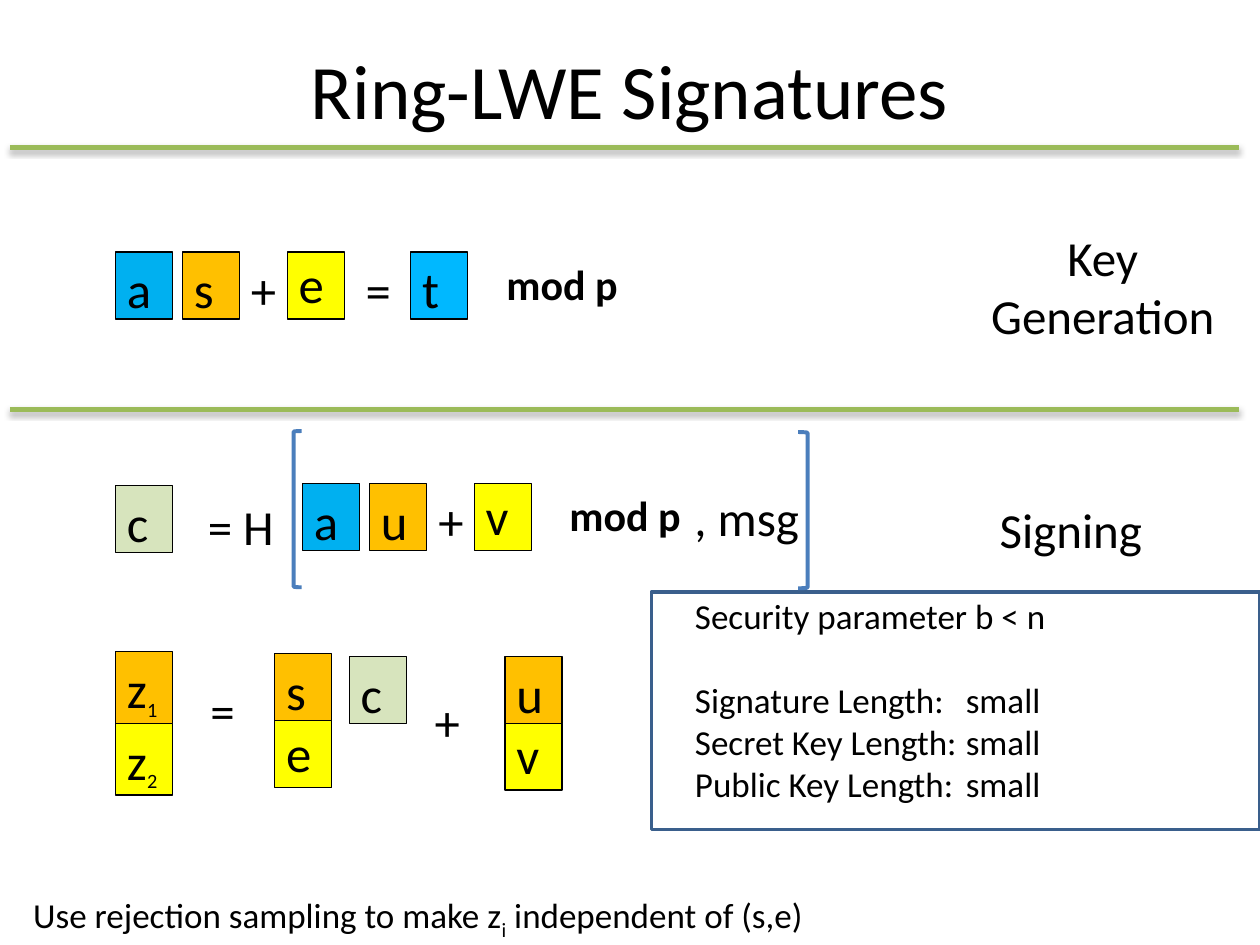
import pptx
import pptx.dml.color
import pptx.enum.shapes
import pptx.enum.text
import pptx.oxml
import pptx.oxml.ns
import pptx.util

Cm = pptx.util.Cm
Pt = pptx.util.Pt
RGBColor = pptx.dml.color.RGBColor
Shape = pptx.enum.shapes.MSO_SHAPE
Align = pptx.enum.text.PP_ALIGN
Anchor = pptx.enum.text.MSO_ANCHOR

BLACK = RGBColor(0x00, 0x00, 0x00)
BLUE = RGBColor(0x00, 0xB0, 0xF0)
BRIGHT_BLUE = RGBColor(0x00, 0xB8, 0xFF)
ORANGE = RGBColor(0xFF, 0xC0, 0x00)
YELLOW = RGBColor(0xFF, 0xFF, 0x00)
PALE_GREEN = RGBColor(0xD7, 0xE4, 0xBD)
GREEN = RGBColor(0x9B, 0xBB, 0x59)
BRACKET_BLUE = RGBColor(0x4B, 0x7E, 0xBC)
FRAME_BLUE = RGBColor(0x3A, 0x5F, 0x8C)

NAMESPACE = pptx.oxml.ns.nsdecls("a")
SHADOW = (
    f'<a:effectLst {NAMESPACE}><a:outerShdw blurRad="39370" dist="22860" dir="5400000" rotWithShape="0">'
    '<a:srgbClr val="000000"><a:alpha val="35000"/></a:srgbClr></a:outerShdw></a:effectLst>'
)
TABS = f'<a:tabLst {NAMESPACE}><a:tab pos="{Cm(5.46)}" algn="l"/></a:tabLst>'

deck = pptx.Presentation()
deck.slide_width = Cm(25.4)
deck.slide_height = Cm(19.05)
page = deck.slides.add_slide(deck.slide_layouts[6])


def add_spans(para, spans, size, bold=False):
    for text, span_size, baseline in spans:
        span = para.add_run()
        span.text = text
        span.font.name = "Calibri"
        span.font.size = Pt(span_size or size)
        span.font.bold = bold
        span.font.color.rgb = BLACK
        if baseline:
            span.font._element.set("baseline", str(baseline * 1000))


def add_label(left, top, width, height, spans, size, align=Align.LEFT, bold=False, inset=0.13):
    box = page.shapes.add_textbox(Cm(left), Cm(top), Cm(width), Cm(height))
    box.text_frame.word_wrap = True
    box.text_frame.margin_top = Cm(inset)
    para = box.text_frame.paragraphs[0]
    para.alignment = align
    add_spans(para, spans, size, bold)
    return box


title = add_label(1.27, 0.2, 22.86, 3.18, [("Ring-LWE Signatures", 44, 0)], 44, Align.CENTER)
title.text_frame.vertical_anchor = Anchor.MIDDLE

for y in (8.26, 2.97):
    divider = page.shapes.add_connector(
        pptx.enum.shapes.MSO_CONNECTOR.STRAIGHT, Cm(0.2), Cm(y), Cm(24.97), Cm(y))
    divider.line.color.rgb = GREEN
    divider.line.width = Pt(3)
    divider._element.spPr.append(pptx.oxml.parse_xml(SHADOW))

frame = page.shapes.add_shape(Shape.RECTANGLE, Cm(13.13), Cm(11.94), Cm(12.27), Cm(4.78))
left_bracket = page.shapes.add_shape(Shape.LEFT_BRACKET, Cm(5.92), Cm(8.69), Cm(0.16), Cm(3.15))
right_bracket = page.shapes.add_shape(Shape.RIGHT_BRACKET, Cm(16.09), Cm(8.71), Cm(0.19), Cm(3.15))
for outline, color, width in (
    (frame, FRAME_BLUE, 2),
    (left_bracket, BRACKET_BLUE, 2.25),
    (right_bracket, BRACKET_BLUE, 2.25),
):
    outline.shadow.inherit = False
    outline.fill.background()
    outline.line.color.rgb = color
    outline.line.width = Pt(width)

TILES = [
    ("a", "", 2.33, 5.08, 1.35, BLUE),
    ("s", "", 3.68, 5.08, 1.35, ORANGE),
    ("e", "", 5.79, 5.08, 1.35, YELLOW),
    ("t", "", 8.28, 5.08, 1.35, BRIGHT_BLUE),
    ("c", "", 2.33, 9.79, 1.35, PALE_GREEN),
    ("a", "", 6.1, 9.75, 1.35, BLUE),
    ("u", "", 7.45, 9.75, 1.35, ORANGE),
    ("v", "", 9.56, 9.75, 1.35, YELLOW),
    ("z", "1", 2.33, 13.13, 1.45, ORANGE),
    ("z", "2", 2.33, 14.58, 1.45, YELLOW),
    ("s", "", 5.54, 13.18, 1.35, ORANGE),
    ("e", "", 5.54, 14.53, 1.35, YELLOW),
    ("c", "", 7.04, 13.23, 1.35, PALE_GREEN),
    ("u", "", 10.18, 13.23, 1.35, ORANGE),
    ("v", "", 10.18, 14.58, 1.35, YELLOW),
]
for letter, index, left, top, height, color in TILES:
    tile = page.shapes.add_shape(Shape.RECTANGLE, Cm(left), Cm(top), Cm(1.15), Cm(height))
    tile.shadow.inherit = False
    tile.fill.solid()
    tile.fill.fore_color.rgb = color
    tile.line.color.rgb = BLACK
    tile.line.width = Pt(0.75)
    tile.text_frame.word_wrap = True
    tile.text_frame.vertical_anchor = Anchor.TOP
    tile.text_frame.margin_left = tile.text_frame.margin_right = Cm(0.23)
    para = tile.text_frame.paragraphs[0]
    para.alignment = Align.LEFT
    if letter in "ev":
        para.line_spacing = 0.93
    spans = [(letter, 29, 0)]
    if index:
        spans.append((index, 20, -25))
    add_spans(para, spans, 29)

for symbol, left, top in (("+", 4.83, 5.08), ("=", 7.14, 5.08), ("+", 8.61, 9.75), ("+", 8.53, 13.79)):
    operator = add_label(left, top, 0.97, 1.47, [(symbol, 29, 0)], 29)
    operator.text_frame.margin_left = operator.text_frame.margin_right = Cm(0.23)

for text, left, top, width in (("= H", 3.96, 9.83, 1.96), (", msg", 13.77, 9.65, 3.18), ("=", 4.01, 13.54, 1.27)):
    term = add_label(left, top, width, 1.37, [(text, 28, 0)], 28, inset=0.18)
    term.text_frame.margin_left = term.text_frame.margin_right = Cm(0.23)

for left, top in ((9.96, 5.08), (11.23, 9.73)):
    add_label(left, top, 3.18, 1.27, [("mod p", 24, 0)], 24, bold=True)

add_label(19.69, 4.45, 5.08, 2.64, [("Key Generation", 28, 0)], 28, Align.CENTER)
add_label(19.9, 9.95, 5.08, 1.45, [("Signing", 28, 0)], 28)
add_label(0.42, 17.88, 17.78, 1.12, [
    ("Use rejection sampling to make z", 20, 0),
    ("i", 20, -25),
    (" independent of (s,e)", 20, 0),
], 20)

summary = add_label(13.76, 11.86, 11.43, 4.8, [("Security parameter b < n", 20, 0)], 20)
for name in ("Signature", "Secret Key", "Public Key"):
    para = summary.text_frame.add_paragraph()
    para._p.get_or_add_pPr().append(pptx.oxml.parse_xml(TABS))
    if name == "Signature":
        para.space_before = Pt(24)
    add_spans(para, [(f"{name} Length:\tsmall", 20, 0)], 20)

deck.save("out.pptx")
